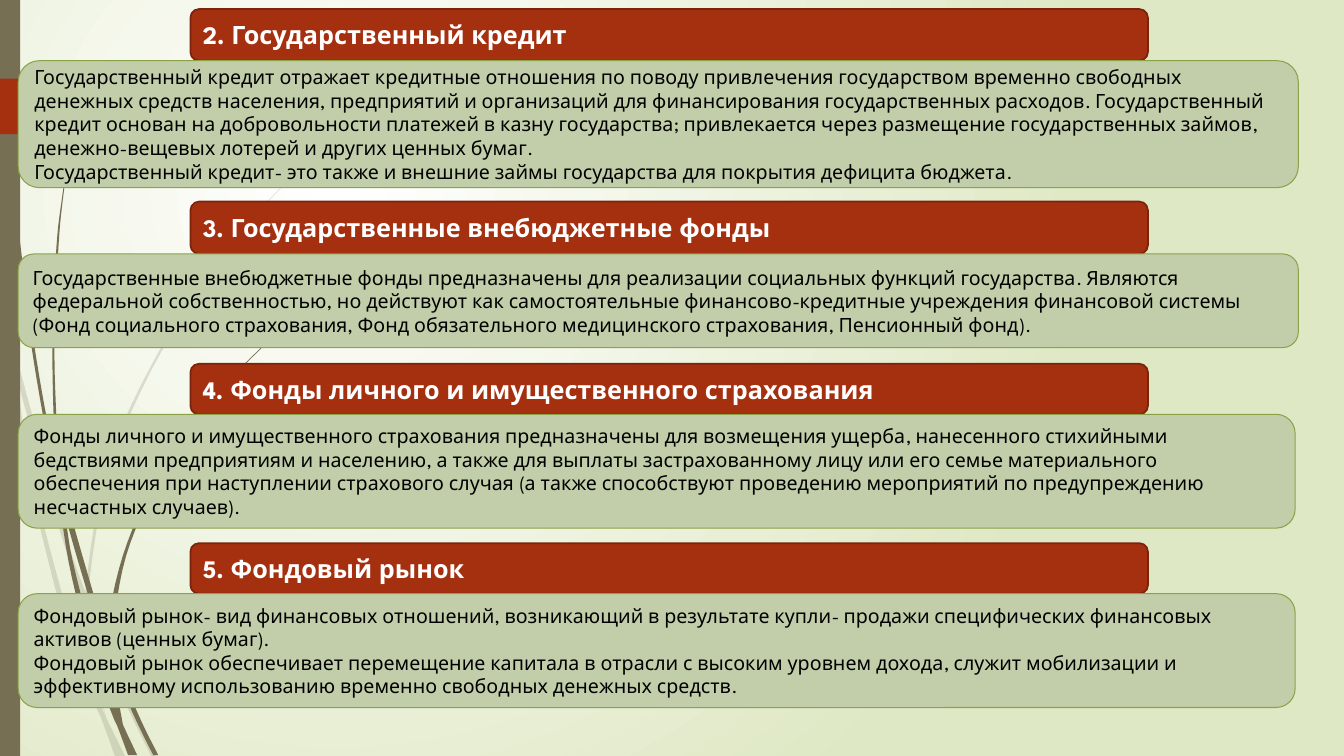
from lxml import etree
from pptx import Presentation
from pptx.dml.color import RGBColor
from pptx.enum.shapes import MSO_SHAPE as SHAPE
from pptx.enum.text import MSO_ANCHOR as ANCHOR, PP_ALIGN as ALIGN
from pptx.oxml.ns import qn
from pptx.util import Cm, Pt

WHITE = RGBColor(0xFF, 0xFF, 0xFF)
BLACK = RGBColor(0x00, 0x00, 0x00)
MIST = RGBColor(0xDF, 0xE8, 0xC4)
OLIVE = RGBColor(0x76, 0x6F, 0x54)
RUST = RGBColor(0xA5, 0x30, 0x10)
RUST_EDGE = RGBColor(0x7A, 0x24, 0x0C)
SAGE = RGBColor(0xC2, 0xCE, 0xA9)
SAGE_EDGE = RGBColor(0x8B, 0xA2, 0x49)
FONT = "League Spartan"
STEM_UNIT = Cm(2.54) / 1000
CURVE_STEPS = 6

PALE_STEMS = [
    ([(0, 282), (9, 322), (14, 345), (62, 520), (88, 596), (127, 692), (155, 750)],
     [(0, 299), (10, 344), (17, 376), (58, 522), (88, 610), (123, 694), (150, 750)]),
    ([(11, 350), (17, 376), (31, 469), (70, 619), (93, 683), (105, 711), (124, 750)],
     [(11, 350), (28, 470), (65, 621), (92, 693), (101, 714), (114, 750)]),
    ([(312, 154), (268, 198), (229, 245), (160, 349), (110, 462), (88, 584), (91, 646), (105, 711)],
     [(312, 153), (268, 197), (228, 244), (158, 348), (107, 461), (85, 584), (87, 646), (105, 711)]),
]
DARK_STEMS = [
    ([(4, 0), (8, 109), (19, 232), (36, 355), (55, 453), (93, 590), (110, 641), (136, 706), (157, 749)],
     [(3, 0), (7, 110), (17, 233), (33, 355), (56, 477), (88, 592), (106, 645), (132, 708), (152, 749)]),
    ([(57, 477), (64, 505), (72, 556), (98, 657), (110, 691), (122, 719), (136, 749)],
     [(57, 477), (68, 557), (93, 659), (111, 708), (117, 722), (127, 749)]),
    ([(261, 344), (231, 374), (205, 406), (158, 476), (125, 552), (111, 633), (111, 656), (122, 719)],
     [(260, 344), (231, 373), (204, 405), (156, 474), (122, 551), (106, 631), (110, 691), (122, 719)]),
    ([(70, 141), (63, 193), (58, 245), (54, 349), (58, 453), (60, 472)],
     [(70, 141), (62, 193), (56, 245), (52, 349), (55, 449), (60, 472)]),
]

SECTIONS = [
    ("2. Государственный кредит", 0.23, 1.3, 3.2, 32.26, [
        "Государственный кредит отражает кредитные отношения по поводу привлечения государством временно "
        "свободных денежных средств населения, предприятий и организаций для финансирования государственных "
        "расходов. Государственный кредит основан на добровольности платежей в казну государства; привлекается "
        "через размещение государственных займов, денежно-вещевых лотерей и других ценных бумаг.",
        "Государственный кредит- это также и внешние займы государства для покрытия дефицита бюджета."]),
    ("3. Государственные внебюджетные фонды", 5.08, 1.32, 2.36, 32.26, [
        "Государственные внебюджетные фонды предназначены для реализации социальных функций государства. "
        "Являются федеральной собственностью, но действуют как самостоятельные финансово-кредитные учреждения "
        "финансовой системы (Фонд социального страхования, Фонд обязательного медицинского страхования, "
        "Пенсионный фонд)."]),
    ("4. Фонды личного и имущественного страхования", 9.17, 1.27, 2.87, 32.18, [
        "Фонды личного и имущественного страхования предназначены для возмещения ущерба, нанесенного стихийными "
        "бедствиями предприятиям и населению, а также для выплаты застрахованному лицу или его семье "
        "материального обеспечения при наступлении страхового случая (а также способствуют проведению "
        "мероприятий по предупреждению несчастных случаев)."]),
    ("5. Фондовый рынок", 13.69, 1.27, 2.87, 32.18, [
        "Фондовый рынок- вид финансовых отношений, возникающий в результате купли- продажи специфических "
        "финансовых активов (ценных бумаг).",
        "Фондовый рынок обеспечивает перемещение капитала в отрасли с высоким уровнем дохода, служит "
        "мобилизации и эффективному использованию временно свободных денежных средств."]),
]


def paint(sp, fill, edge=None, weight=0):
    sp.shadow.inherit = False
    sp.fill.solid()
    sp.fill.fore_color.rgb = fill
    if edge is None:
        sp.line.fill.background()
    else:
        sp.line.color.rgb = edge
        sp.line.width = Pt(weight)


def set_background(s):
    fill = s.background.fill
    fill.gradient()
    for stop, color in zip(fill.gradient_stops, (WHITE, MIST)):
        stop.color.rgb = color
    grad = s.element.find(".//" + qn("a:gradFill"))
    grad.remove(grad.find(qn("a:lin")))
    circle = etree.SubElement(grad, qn("a:path"), path="circle")
    etree.SubElement(circle, qn("a:fillToRect"), l="50000", t="50000", r="100000", b="100000")


def smooth(points):
    padded = [points[0], *points, points[-1]]
    curve = []
    for a, b, c, d in zip(padded, padded[1:], padded[2:], padded[3:]):
        for step in range(CURVE_STEPS):
            t = step / CURVE_STEPS
            curve.append(tuple(
                5 * (2 * q + (r - p) * t + (2 * p - 5 * q + 4 * r - u) * t ** 2
                     + (3 * q - p - 3 * r + u) * t ** 3)
                for p, q, r, u in zip(a, b, c, d)))
    return curve + [tuple(10 * v for v in points[-1])]


def add_stem(s, right, left, opacity=100):
    outline = smooth(right) + smooth(left)[::-1]
    builder = s.shapes.build_freeform(*outline[0], scale=STEM_UNIT)
    builder.add_line_segments(outline[1:], close=True)
    sp = builder.convert_to_shape()
    paint(sp, OLIVE)
    if opacity < 100:
        color = sp.element.spPr.find(".//" + qn("a:srgbClr"))
        etree.SubElement(color, qn("a:alpha"), val=str(opacity * 1000))


def add_block(s, kind, left, top, width, height, fill):
    sp = s.shapes.add_shape(kind, Cm(left), Cm(top), Cm(width), Cm(height))
    paint(sp, fill)
    return sp


def add_panel(s, left, top, width, height, look, paragraphs, size, color, bold):
    sp = add_block(s, SHAPE.ROUNDED_RECTANGLE, left, top, width, height, look[0])
    paint(sp, *look)
    tf = sp.text_frame
    tf.word_wrap = True
    tf.vertical_anchor = ANCHOR.MIDDLE
    for i, text in enumerate(paragraphs):
        p = tf.add_paragraph() if i else tf.paragraphs[0]
        p.alignment = ALIGN.LEFT
        r = p.add_run()
        r.text = text
        r.font.name = FONT
        r.font.size = Pt(size)
        r.font.bold = bold
        r.font.color.rgb = color


def main():
    prs = Presentation()
    prs.slide_width, prs.slide_height = Cm(33.87), Cm(19.05)
    s = prs.slides.add_slide(prs.slide_layouts[6])
    set_background(s)
    for right, left in PALE_STEMS:
        add_stem(s, right, left, opacity=20)
    for right, left in DARK_STEMS:
        add_stem(s, right, left)
    add_block(s, SHAPE.RECTANGLE, 0, 0, 0.51, 19.05, OLIVE)
    marker = add_block(s, SHAPE.PENTAGON, 0, 1.98, 4.42, 1.4, RUST)
    marker.adjustments[0] = 0.46
    for heading, top, head_height, body_height, body_width, paragraphs in SECTIONS:
        add_panel(s, 4.8, top, 24.13, head_height, (RUST, RUST_EDGE, 1.25), [heading], 18, WHITE, True)
        add_panel(s, 0.46, top + head_height, body_width, body_height, (SAGE, SAGE_EDGE, 0.75),
                  paragraphs, 14, BLACK, False)
    prs.save("out.pptx")


if __name__ == "__main__":
    main()
